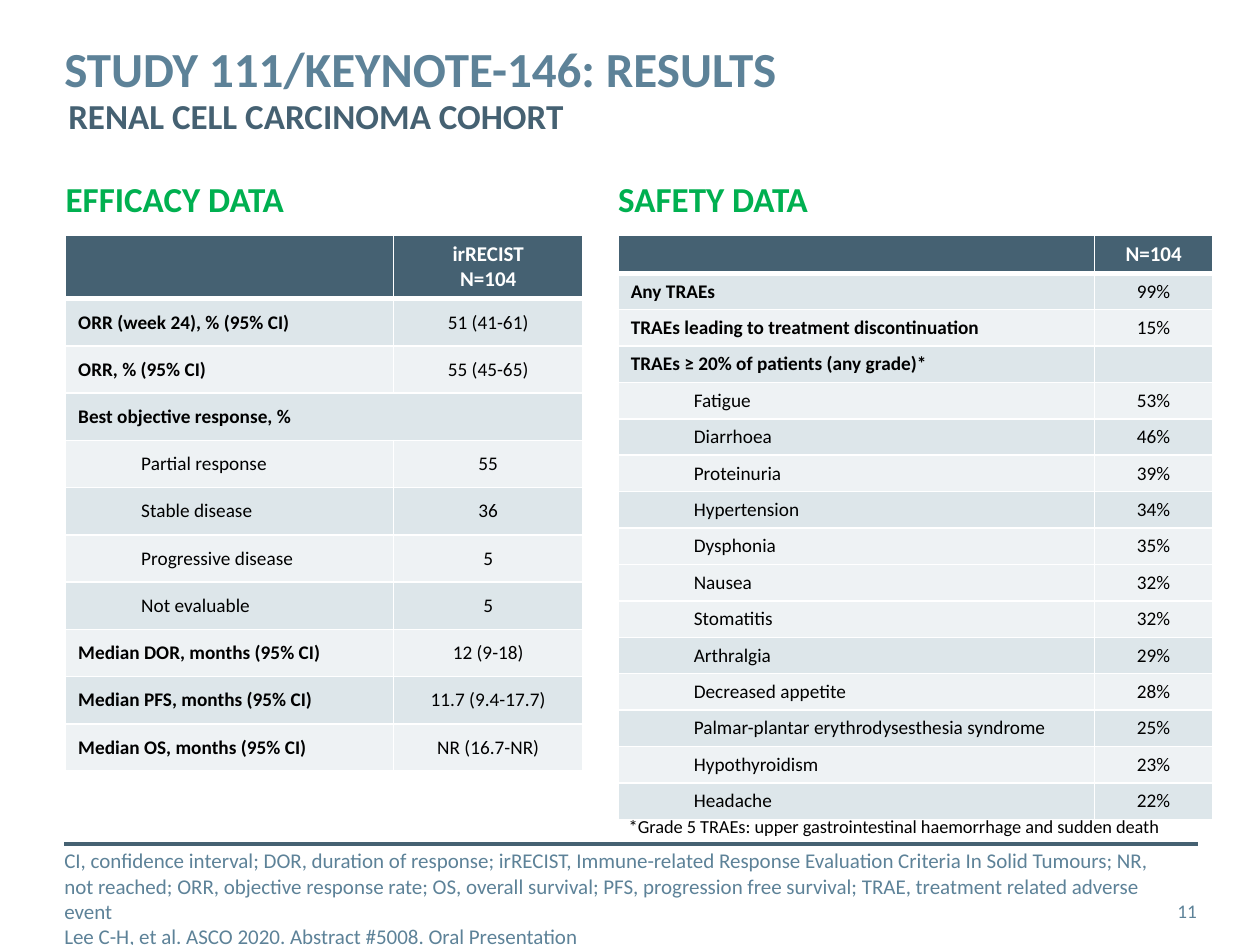
from lxml.etree import SubElement
from pptx import Presentation
from pptx.dml.color import RGBColor
from pptx.enum.shapes import MSO_CONNECTOR
from pptx.enum.text import MSO_ANCHOR, PP_ALIGN
from pptx.oxml.ns import qn
from pptx.util import Pt

PX = 9525
THEME = {
    "font": "Calibri", "dark": "456172", "blue": "5D8298", "green": "00B050",
    "band": "DDE6EA", "pale": "DEE6EB", "white": "FFFFFF", "black": "000000",
    "title": 28, "head": 20, "label": 12, "cell": 11, "note": 10.5,
}


def write(frame, text, size, color, bold=False, align=PP_ALIGN.LEFT):
    for i, line in enumerate(text.split("\n")):
        par = frame.paragraphs[0] if i == 0 else frame.add_paragraph()
        par.alignment = align
        if not line:
            SubElement(par._p, qn("a:endParaRPr"), sz=str(THEME[size] * 100))
            continue
        run = par.add_run()
        run.text = line
        style = {"name": THEME["font"], "size": Pt(THEME[size]), "bold": bold}
        for key, value in style.items():
            setattr(run.font, key, value)
        run.font.color.rgb = RGBColor.from_string(THEME[color])


def paint(cell, color, alpha=None, base=1):
    props = cell._tc.get_or_add_tcPr()
    for side, width in (("L", 1), ("R", 1), ("T", 1), ("B", base)):
        edge = SubElement(props, qn(f"a:ln{side}"), w=str(Pt(width)))
        fill = SubElement(edge, qn("a:solidFill"))
        SubElement(fill, qn("a:srgbClr"), val=THEME["white"])
    cell.fill.solid()
    cell.fill.fore_color.rgb = RGBColor.from_string(THEME[color])
    if alpha:
        tint = props.find(qn("a:solidFill")).find(qn("a:srgbClr"))
        SubElement(tint, qn("a:alpha"), val=str(alpha * 1000))


deck = Presentation()
deck.slide_width, deck.slide_height = 960 * PX, 720 * PX
slide = deck.slides.add_slide(deck.slide_layouts[6])

rule = slide.shapes.add_connector(
    MSO_CONNECTOR.STRAIGHT, 49 * PX, 643 * PX, 913 * PX, 643 * PX)
rule.line.color.rgb = RGBColor.from_string(THEME["dark"])
rule.line.width = Pt(2)
SubElement(rule._element.spPr, qn("a:effectLst"))

main, sub = False, True
effect = [
    ("ORR (week 24), % (95% CI)", "51 (41-61)", main),
    ("ORR, % (95% CI)", "55 (45-65)", main),
    ("Best objective response, %", "", main),
    ("Partial response", "55", sub),
    ("Stable disease", "36", sub),
    ("Progressive disease", "5", sub),
    ("Not evaluable", "5", sub),
    ("Median DOR, months (95% CI)", "12 (9-18)", main),
    ("Median PFS, months (95% CI)", "11.7 (9.4-17.7)", main),
    ("Median OS, months (95% CI)", "NR (16.7-NR)", main),
]
safety = [
    ("Any TRAEs", "99%", main),
    ("TRAEs leading to treatment discontinuation", "15%", main),
    ("TRAEs ≥ 20% of patients (any grade)*", "", main),
    ("Fatigue", "53%", sub),
    ("Diarrhoea", "46%", sub),
    ("Proteinuria", "39%", sub),
    ("Hypertension", "34%", sub),
    ("Dysphonia", "35%", sub),
    ("Nausea", "32%", sub),
    ("Stomatitis", "32%", sub),
    ("Arthralgia", "29%", sub),
    ("Decreased appetite", "28%", sub),
    ("Palmar-plantar erythrodysesthesia syndrome", "25%", sub),
    ("Hypothyroidism", "23%", sub),
    ("Headache", "22%", sub),
]
tables = [
    (50, (250, 144), 48, 36, "irRECIST\nN=104", effect),
    (471, (363, 90), 27, 27, "N=104", safety),
]
for left, widths, top, step, head, data in tables:
    high = top + step * len(data)
    grid = slide.shapes.add_table(
        len(data) + 1, 2, left * PX, 179 * PX, sum(widths) * PX, high * PX).table
    grid.first_row = grid.horz_banding = False
    for col, width in zip(grid.columns, widths):
        col.width = width * PX
    for i, (name, value, inner) in enumerate([("", head, main)] + data):
        grid.rows[i].height = (step if i else top) * PX
        for j, text in enumerate((name, value)):
            cell = grid.cell(i, j)
            cell.vertical_anchor = MSO_ANCHOR.MIDDLE
            align = PP_ALIGN.CENTER if j else PP_ALIGN.LEFT
            if i == 0:
                paint(cell, "dark", base=3)
                write(cell.text_frame, text, "label", "white", True, align)
                continue
            if i % 2 and name != "Nausea":
                paint(cell, "band")
            else:
                paint(cell, "pale", 50)
            write(cell.text_frame, text, "cell", "black", j == 0 and not inner, align)
            if inner and j == 0:
                cell.text_frame.paragraphs[0]._p.get_or_add_pPr().set("marL", str(48 * PX))
    if data is effect:
        grid.cell(3, 0).merge(grid.cell(3, 1))

legend = (
    "CI, confidence interval; DOR, duration of response; irRECIST, Immune-related "
    "Response Evaluation Criteria In Solid Tumours; NR, not reached; ORR, objective "
    "response rate; OS, overall survival; PFS, progression free survival; TRAE, "
    "treatment related adverse event\n"
    "Lee C-H, et al. ASCO 2020. Abstract #5008. Oral Presentation"
)
left, right = PP_ALIGN.LEFT, PP_ALIGN.RIGHT
high, mid = MSO_ANCHOR.TOP, MSO_ANCHOR.MIDDLE
texts = [
    ((49, 26, 688, 84), "STUDY 111/KEYNOTE-146: RESULTS", "title", "blue", True, left, high),
    ((52, 72, 521, 71), "RENAL CELL CARCINOMA COHORT", "head", "dark", True, left, high),
    ((50, 135, 409, 41), "EFFICACY DATA", "head", "green", True, left, high),
    ((471, 135, 409, 41), "SAFETY DATA", "head", "green", True, left, high),
    ((479, 621, 470, 34), "*Grade 5 TRAEs: upper gastrointestinal haemorrhage and sudden death",
     "note", "black", False, left, high),
    ((49, 646, 845, 74), legend, "label", "blue", False, left, high),
    ((851, 675, 61, 38), "11", "cell", "blue", False, right, mid),
]
for place, text, size, color, bold, align, anchor in texts:
    frame = slide.shapes.add_textbox(*(n * PX for n in place)).text_frame
    setup = {"word_wrap": True, "vertical_anchor": anchor, "margin_left": 0,
             "margin_right": 0, "margin_top": 0, "margin_bottom": 0}
    for key, value in setup.items():
        setattr(frame, key, value)
    write(frame, text, size, color, bold, align)
    if size == "title":
        frame.paragraphs[0].line_spacing = 1.07

deck.save("out.pptx")
